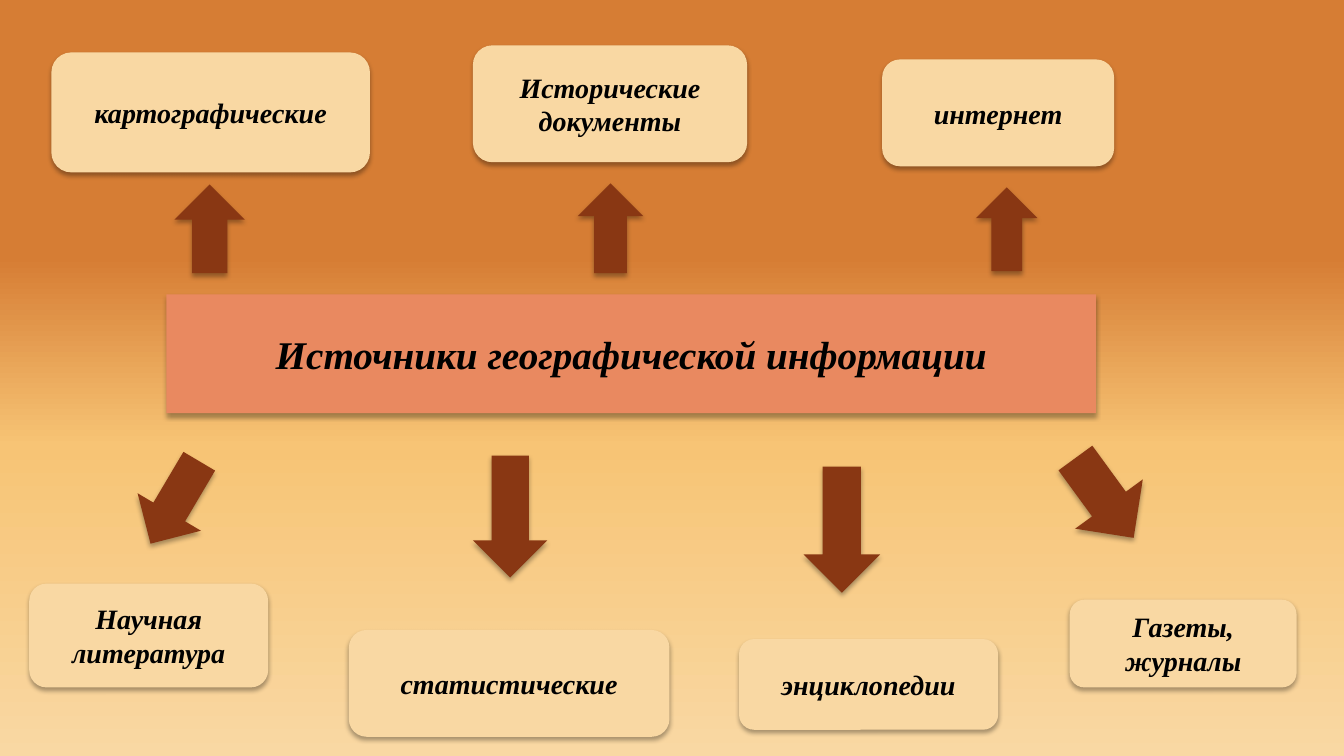
from copy import deepcopy

from lxml.etree import SubElement
from pptx import Presentation
from pptx.dml.color import RGBColor
from pptx.enum.shapes import MSO_SHAPE
from pptx.enum.text import MSO_ANCHOR, MSO_AUTO_SIZE, PP_ALIGN
from pptx.oxml.ns import qn
from pptx.util import Inches, Pt

BLACK = RGBColor(0x00, 0x00, 0x00)
CORAL = RGBColor(0xE9, 0x89, 0x60)
CREAM = RGBColor(0xF9, 0xD8, 0xA3)
BROWN = RGBColor(0x89, 0x37, 0x13)
ORANGE = RGBColor(0xD6, 0x7D, 0x34)
GOLD = RGBColor(0xF7, 0xC4, 0x75)
FONT = "Times New Roman"

TITLE_BOX = (1.65, 2.92, 9.22, 1.18)
SOURCES = [
    ("картографические", (0.51, 0.52, 3.16, 1.19)),
    ("Исторические документы", (4.69, 0.45, 2.72, 1.16)),
    ("интернет", (8.75, 0.59, 2.3, 1.06)),
    ("Научная литература", (0.29, 5.79, 2.37, 1.03)),
    ("статистические", (3.46, 6.25, 3.18, 1.06)),
    ("энциклопедии", (7.33, 6.34, 2.57, 0.9)),
    ("Газеты, журналы", (10.61, 5.95, 2.25, 0.87)),
]
UP, DOWN = MSO_SHAPE.UP_ARROW, MSO_SHAPE.DOWN_ARROW
ARROWS = [
    (UP, (1.73, 1.83, 0.7, 0.88), 0),
    (UP, (5.73, 1.82, 0.65, 0.89), 0),
    (UP, (9.68, 1.86, 0.61, 0.83), 0),
    (DOWN, (1.37, 4.51, 0.73, 0.95), 30.6),
    (DOWN, (4.69, 4.52, 0.74, 1.21), 0),
    (DOWN, (7.97, 4.63, 0.76, 1.25), 0),
    (DOWN, (10.54, 4.45, 0.83, 0.98), 323.9),
]


def paint_background(s):
    """Fill the slide with a vertical three-stop gradient."""
    fill = s.background.fill
    fill.gradient()
    fill.gradient_angle = 270
    stops = s._element.find(".//" + qn("a:gsLst"))
    stops.append(deepcopy(stops[-1]))
    colors = [(0.34, ORANGE), (0.59, GOLD), (1, CREAM)]
    for stop, (position, color) in zip(fill.gradient_stops, colors):
        stop.position = position
        stop.color.rgb = color


def style_shape(sp, color):
    """Give a shape a solid fill, no outline and a soft shadow below."""
    sp.fill.solid()
    sp.fill.fore_color.rgb = color
    sp.line.fill.background()
    sp.shadow.inherit = False
    effects = sp._element.spPr.find(qn("a:effectLst"))
    shadow = SubElement(effects, qn("a:outerShdw"), blurRad=str(Pt(3.5)),
                        dist=str(Pt(2.2)), dir="5400000", rotWithShape="0")
    tint = SubElement(shadow, qn("a:srgbClr"), val="000000")
    SubElement(tint, qn("a:alpha"), val="32000")


def write_label(sp, text, size):
    """Write centred bold italic text in a shape."""
    tf = sp.text_frame
    tf.text = text
    tf.word_wrap = True
    tf.auto_size = MSO_AUTO_SIZE.NONE
    tf.vertical_anchor = MSO_ANCHOR.MIDDLE
    p = tf.paragraphs[0]
    p.alignment = PP_ALIGN.CENTER
    font = p.runs[0].font
    font.name, font.size = FONT, Pt(size)
    font.bold = font.italic = True
    font.color.rgb = BLACK


def add_title(s, text, box):
    """Turn the title placeholder into the central rounded box."""
    sp = s.shapes.title
    sp.left, sp.top, sp.width, sp.height = map(Inches, box)
    geometry = SubElement(sp._element.spPr, qn("a:prstGeom"), prst="roundRect")
    SubElement(geometry, qn("a:avLst"))
    style_shape(sp, CORAL)
    write_label(sp, text, 28)


def add_source(s, text, box):
    """Place one source of information in a rounded box."""
    sp = s.shapes.add_shape(MSO_SHAPE.ROUNDED_RECTANGLE, *map(Inches, box))
    style_shape(sp, CREAM)
    write_label(sp, text, 20)


def add_arrow(s, kind, box, rotation):
    """Place a block arrow leading from the title to a source."""
    sp = s.shapes.add_shape(kind, *map(Inches, box))
    sp.rotation = rotation
    style_shape(sp, BROWN)


def main():
    """Build the slide and save it."""
    prs = Presentation()
    prs.slide_width, prs.slide_height = Inches(13.33), Inches(7.5)
    s = prs.slides.add_slide(prs.slide_layouts[5])
    paint_background(s)
    add_title(s, "Источники географической информации", TITLE_BOX)
    for text, box in SOURCES:
        add_source(s, text, box)
    for kind, box, rotation in ARROWS:
        add_arrow(s, kind, box, rotation)
    prs.save("out.pptx")


if __name__ == "__main__":
    main()
